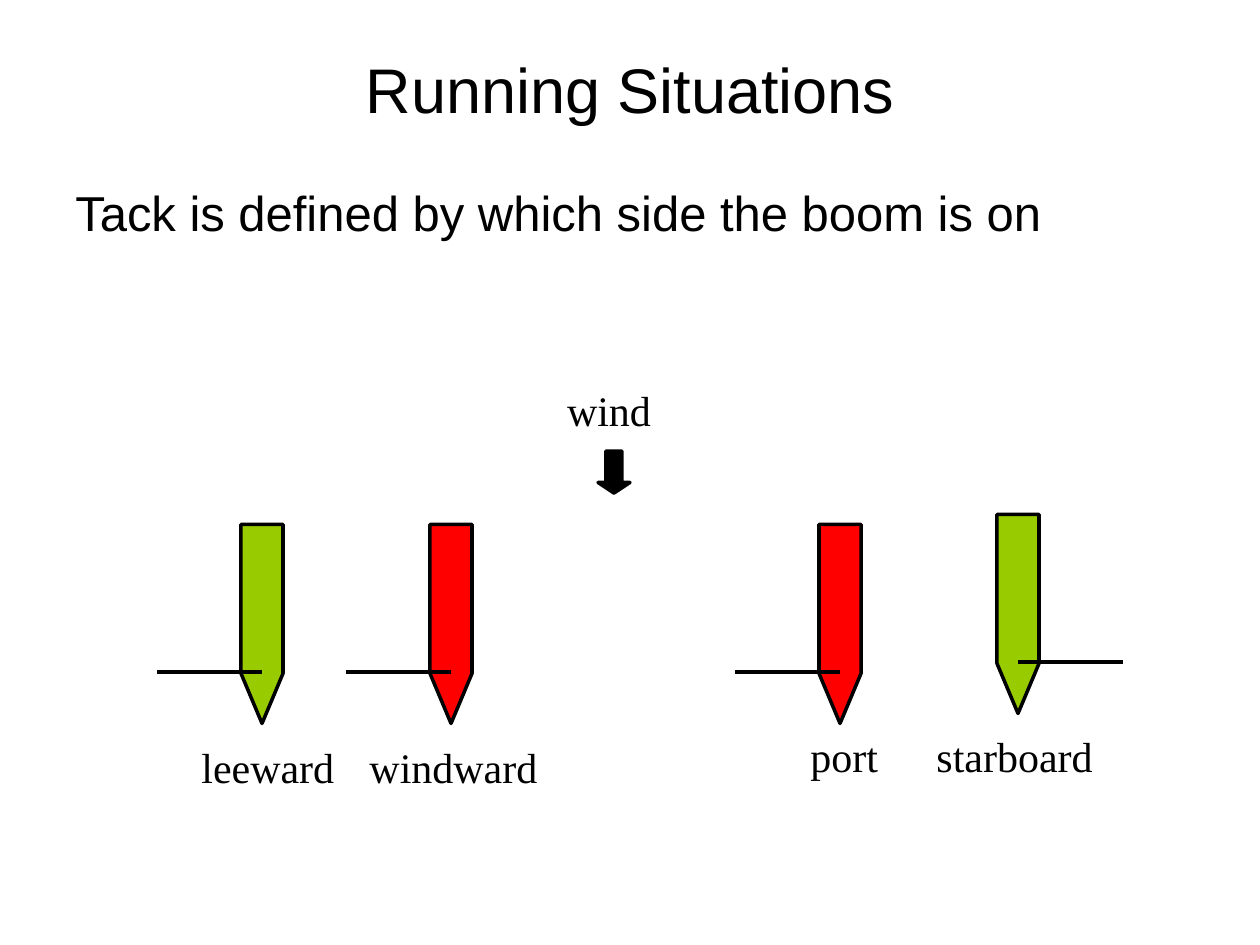
from pptx import Presentation
from pptx.dml.color import RGBColor
from pptx.enum.shapes import MSO_CONNECTOR, MSO_SHAPE
from pptx.enum.text import MSO_ANCHOR, MSO_AUTO_SIZE, PP_ALIGN
from pptx.oxml.ns import qn
from pptx.util import Emu, Pt
from lxml.etree import SubElement

PX_PER_INCH = 126
BLACK, GREEN, RED = "000000", "99CC00", "FF0000"
HULL_LENGTH, HULL_WIDTH = 199, 42
BOOM_LENGTH, BOOM_DROP = 105, 48


def px(length):
    return Emu(round(length * 914400 / PX_PER_INCH))


def color(hex_value):
    return RGBColor.from_string(hex_value)


def add_text(slide, text, box, size, font, align=PP_ALIGN.LEFT, before=0,
             wrap=True, grow=False, anchor=MSO_ANCHOR.TOP):
    frame = slide.shapes.add_textbox(*map(px, box)).text_frame
    frame.text = text
    frame.word_wrap = wrap
    frame.vertical_anchor = anchor
    frame.auto_size = MSO_AUTO_SIZE.SHAPE_TO_FIT_TEXT if grow else MSO_AUTO_SIZE.NONE
    paragraph = frame.paragraphs[0]
    paragraph.alignment = align
    paragraph.space_before = Pt(before)
    run_font = paragraph.runs[0].font
    run_font.size, run_font.name = Pt(size), font
    run_font.color.rgb = color(BLACK)


def add_label(slide, text, left, top, width):
    add_text(slide, text, (left, top, width, 63), 24, "Times New Roman",
             wrap=False, grow=True)


def add_solid(slide, preset, box, fill, adjustments):
    solid = slide.shapes.add_shape(preset, *map(px, box))
    solid.shadow.inherit = False
    solid.fill.solid()
    solid.fill.fore_color.rgb = color(fill)
    solid.line.color.rgb = color(BLACK)
    solid.line.width = Pt(2)
    for index, value in enumerate(adjustments):
        solid.adjustments[index] = value
    return solid


def add_boat(slide, center_x, center_y, fill, boom_side):
    """Hull with its bow down and a boom out to one side (-1 left, 1 right)."""
    hull_box = (center_x - HULL_LENGTH / 2, center_y - HULL_WIDTH / 2,
                HULL_LENGTH, HULL_WIDTH)
    hull = add_solid(slide, MSO_SHAPE.PENTAGON, hull_box, fill, [1.19])
    hull.rotation = 90

    boom_y = px(center_y + BOOM_DROP)
    boom = slide.shapes.add_connector(
        MSO_CONNECTOR.STRAIGHT, px(center_x), boom_y,
        px(center_x + boom_side * BOOM_LENGTH), boom_y)
    boom.line.color.rgb = color(BLACK)
    boom.line.width = Pt(2)
    SubElement(boom._element.spPr, qn("a:effectLst"))


def main():
    prs = Presentation()
    prs.slide_width, prs.slide_height = px(1260), px(945)
    slide = prs.slides.add_slide(prs.slide_layouts[6])

    # Heading and rule
    add_text(slide, "Running Situations", (63, 38, 1134, 101), 36, "Arial",
             align=PP_ALIGN.CENTER, anchor=MSO_ANCHOR.MIDDLE)
    add_text(slide, "Tack is defined by which side the boom is on",
             (63, 176, 1134, 624), 28, "Arial", before=5.6)

    # Wind direction
    add_solid(slide, MSO_SHAPE.DOWN_ARROW, (598, 451, 32, 42), BLACK, [0.5, 0.33])
    add_text(slide, "wind", (525, 378, 168, 63), 24, "Times New Roman",
             align=PP_ALIGN.CENTER, before=12, grow=True)

    # Boats: center x, center y, hull color, boom side
    for boat in ((262, 624, GREEN, -1), (1018, 614, GREEN, 1),
                 (840, 624, RED, -1), (451, 624, RED, -1)):
        add_boat(slide, *boat)

    # Boat names: text, left, top, width
    for label in (("leeward", 189, 735, 159), ("windward", 357, 735, 194),
                  ("port", 798, 724, 93), ("starboard", 924, 724, 183)):
        add_label(slide, *label)

    prs.save("out.pptx")


if __name__ == "__main__":
    main()
